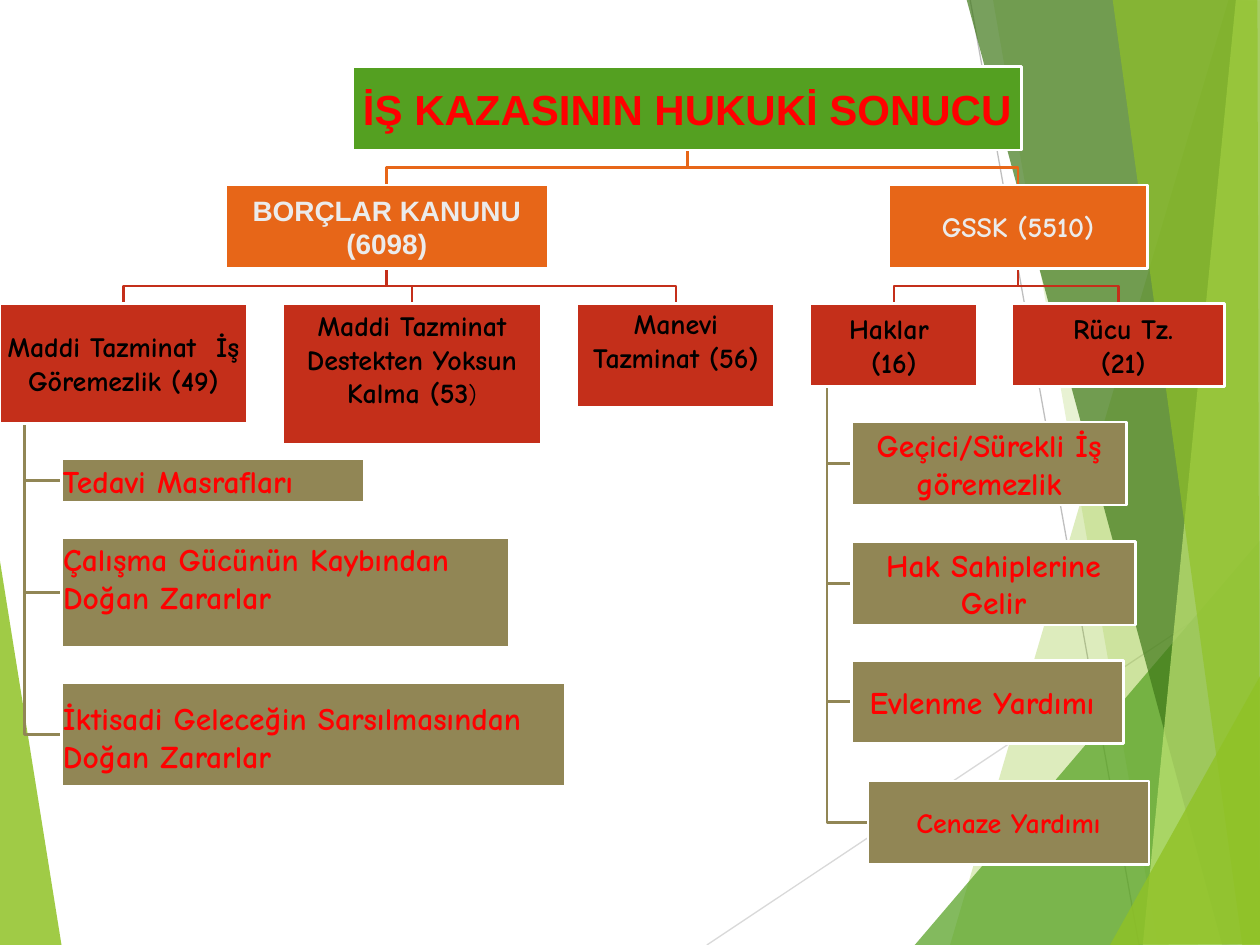
from dataclasses import dataclass, field

from lxml.etree import SubElement
from pptx import Presentation
from pptx.dml.color import RGBColor
from pptx.enum.shapes import MSO_CONNECTOR, MSO_SHAPE
from pptx.enum.text import MSO_ANCHOR, MSO_AUTO_SIZE, PP_ALIGN
from pptx.oxml.ns import qn
from pptx.util import Inches, Pt

COLORS = {
    "lime": "90C226", "green": "54A021", "forest": "3F7819", "pale": "C0E474",
    "orange": "E76618", "rust": "C42F1A", "olive": "918655",
    "red": "FF0000", "black": "000000", "light": "EBEBEB", "white": "FFFFFF",
    "ray": "D9D9D9", "dark_ray": "BFBFBF",
}
HEADING_FONT, BODY_FONT = "Arial", "Comic Neue"

# Colour, opacity in percent, corners
FACETS = [
    ("lime", 85, [(-0.01, 4.39), (0.49, 7.51), (-0.01, 7.5)]),
    ("lime", 30, [(9.75, 0), (7.54, 7.5), (10.02, 7.51), (10.01, 0.01)]),
    ("lime", 20, [(7.88, -0.01), (9.19, 7.5), (10.01, 7.5), (10.01, -0.01)]),
    ("green", 72, [(7.26, 7.5), (10, 4.29), (10.01, 7.5)]),
    ("forest", 70, [(7.67, -0.01), (9.7, 7.5), (10.01, 7.49), (10.01, -0.01)]),
    ("pale", 70, [(9.81, -0.01), (9.07, 7.5), (10.01, 7.5), (10, -0.01)]),
    ("lime", 65, [(8.83, -0.01), (9.86, 7.5), (10, 7.5), (9.98, -0.01)]),
    ("lime", 80, [(8.81, 7.5), (10.01, 5.35), (10.01, 7.49)]),
]
RAYS = [("ray", (5.61, 7.5), (10.01, 4.57)), ("dark_ray", (7.7, 0), (9.04, 7.5))]


@dataclass
class Node:
    lines: list
    left: float
    top: float
    width: float
    height: float
    fill: str
    style: dict
    children: list = field(default_factory=list)
    hanging: bool = False


def law(lines, left, width, children, **style):
    return Node(lines, left, 1.47, width, 0.66, "orange",
                {"color": "light", **style}, children)


def claim(lines, left, width, height, children=(), **style):
    return Node(lines, left, 2.41, width, height, "rust",
                {"color": "black", **style}, list(children), hanging=True)


def item(line, left, top, width, height=0.66, **style):
    return Node([line], left, top, width, height, "olive",
                {"color": "red", "size": 18, **style})


def result_tree():
    losses = [
        item("Tedavi Masrafları", 0.49, 3.64, 2.4, 0.35, align=PP_ALIGN.LEFT),
        item("Çalışma Gücünün Kaybından Doğan Zararlar", 0.49, 4.27, 3.55, 0.87,
             align=PP_ALIGN.LEFT, inset_bottom=0.25),
        item("İktisadi Geleceğin Sarsılmasından Doğan Zararlar", 0.49, 5.42, 4, 0.82,
             align=PP_ALIGN.LEFT, inset_top=0.05),
    ]
    rights = [
        item("Geçici/Sürekli İş göremezlik", 6.76, 3.35, 2.18),
        item("Hak Sahiplerine Gelir", 6.76, 4.3, 2.25),
        item("Evlenme Yardımı ", 6.76, 5.24, 2.16),
        item("Cenaze Yardımı", 6.89, 6.2, 2.23, size=16),
    ]
    obligations = law(["BORÇLAR KANUNU (6098)"], 1.79, 2.56, [
        claim(["Maddi Tazminat  İş Göremezlik (49)"], 0, 1.96, 0.95, losses),
        claim(["Maddi Tazminat", "Destekten Yoksun Kalma (53"], 2.24, 2.06, 1.12,
              inset_bottom=0.25, light_ending=")"),
        claim(["Manevi Tazminat (56)"], 4.58, 1.57, 0.82, inset_bottom=0.25),
    ], font=HEADING_FONT)
    insurance = law(["GSSK (5510)"], 7.05, 2.06, [
        claim(["Haklar ", "(16)"], 6.43, 1.33, 0.66, rights),
        claim([" Rücu Tz.", " (21)"], 8.03, 1.69, 0.66),
    ])
    return Node(["İŞ KAZASININ HUKUKİ SONUCU"], 2.8, 0.53, 5.31, 0.66, "green",
                {"color": "red", "size": 24, "font": HEADING_FONT},
                [obligations, insurance])


def rgb(name):
    return RGBColor.from_string(COLORS[name])


def write_text(shape, lines, *, color, size=16, font=BODY_FONT, align=PP_ALIGN.CENTER,
               inset_top=0.01, inset_bottom=0.01, light_ending=""):
    """Fill a shape with bold lines; light_ending is a smaller, regular last run."""
    frame = shape.text_frame
    frame.word_wrap = True
    frame.auto_size = MSO_AUTO_SIZE.NONE
    frame.vertical_anchor = MSO_ANCHOR.MIDDLE
    frame.margin_left = frame.margin_right = Inches(0.01)
    frame.margin_top, frame.margin_bottom = Inches(inset_top), Inches(inset_bottom)
    runs = []
    for index, line in enumerate(lines):
        paragraph = frame.add_paragraph() if index else frame.paragraphs[0]
        paragraph.alignment = align
        runs.append((paragraph.add_run(), line, size, True))
    if light_ending:
        runs.append((paragraph.add_run(), light_ending, size - 2, False))
    for run, words, points, bold in runs:
        run.text = words
        run.font.name, run.font.size, run.font.bold = font, Pt(points), bold
        run.font.color.rgb = rgb(color)


def add_outline(slide, points, closed):
    corners = [(Inches(x), Inches(y)) for x, y in points]
    builder = slide.shapes.build_freeform(*corners[0])
    builder.add_line_segments(corners[1:], close=closed)
    outline = builder.convert_to_shape()
    outline.shadow.inherit = False
    return outline


def add_facet(slide, color, opacity, points):
    facet = add_outline(slide, points, closed=True)
    facet.fill.solid()
    facet.fill.fore_color.rgb = rgb(color)
    facet.line.fill.background()
    tint = facet._element.spPr.find(qn("a:solidFill"))[0]
    SubElement(tint, qn("a:alpha")).set("val", str(opacity * 1000))


def add_ray(slide, color, start, end):
    ray = slide.shapes.add_connector(
        MSO_CONNECTOR.STRAIGHT, *(Inches(v) for v in start + end))
    ray.line.color.rgb = rgb(color)
    ray.line.width = Pt(0.75)
    SubElement(ray._element.spPr, qn("a:effectLst"))


def add_branch(slide, parent, child):
    bottom = parent.top + parent.height
    if parent.hanging:
        trunk = parent.left + parent.width / 10
        middle = child.top + child.height / 2
        points = [(trunk, bottom), (trunk, middle), (child.left, middle)]
    else:
        start = parent.left + parent.width / 2
        end = child.left + child.width / 2
        bend = (bottom + child.top) / 2
        points = [(start, bottom), (start, bend), (end, bend), (end, child.top)]
    branch = add_outline(slide, points, closed=False)
    branch.fill.background()
    branch.line.color.rgb = rgb(child.fill)
    branch.line.width = Pt(1.5)


def add_branches(slide, node):
    for child in node.children:
        add_branch(slide, node, child)
        add_branches(slide, child)


def format_box(box, node):
    box.left, box.top = Inches(node.left), Inches(node.top)
    box.width, box.height = Inches(node.width), Inches(node.height)
    box.fill.solid()
    box.fill.fore_color.rgb = rgb(node.fill)
    box.line.color.rgb = rgb("white")
    box.line.width = Pt(1.5)
    write_text(box, node.lines, **node.style)


def add_boxes(slide, nodes):
    for node in nodes:
        box = slide.shapes.add_shape(MSO_SHAPE.RECTANGLE, 0, 0, 0, 0)
        box.shadow.inherit = False
        format_box(box, node)
        add_boxes(slide, node.children)


def main():
    deck = Presentation()
    deck.slide_width, deck.slide_height = Inches(10), Inches(7.5)
    slide = deck.slides.add_slide(deck.slide_layouts[5])
    add_facet(slide, *FACETS[0])
    for ray in RAYS:
        add_ray(slide, *ray)
    for facet in FACETS[1:]:
        add_facet(slide, *facet)
    root = result_tree()
    add_branches(slide, root)
    title = slide.shapes.title
    slide.shapes._spTree.append(title._element)  # in front of the facets
    format_box(title, root)
    add_boxes(slide, root.children)
    deck.save("out.pptx")


if __name__ == "__main__":
    main()
